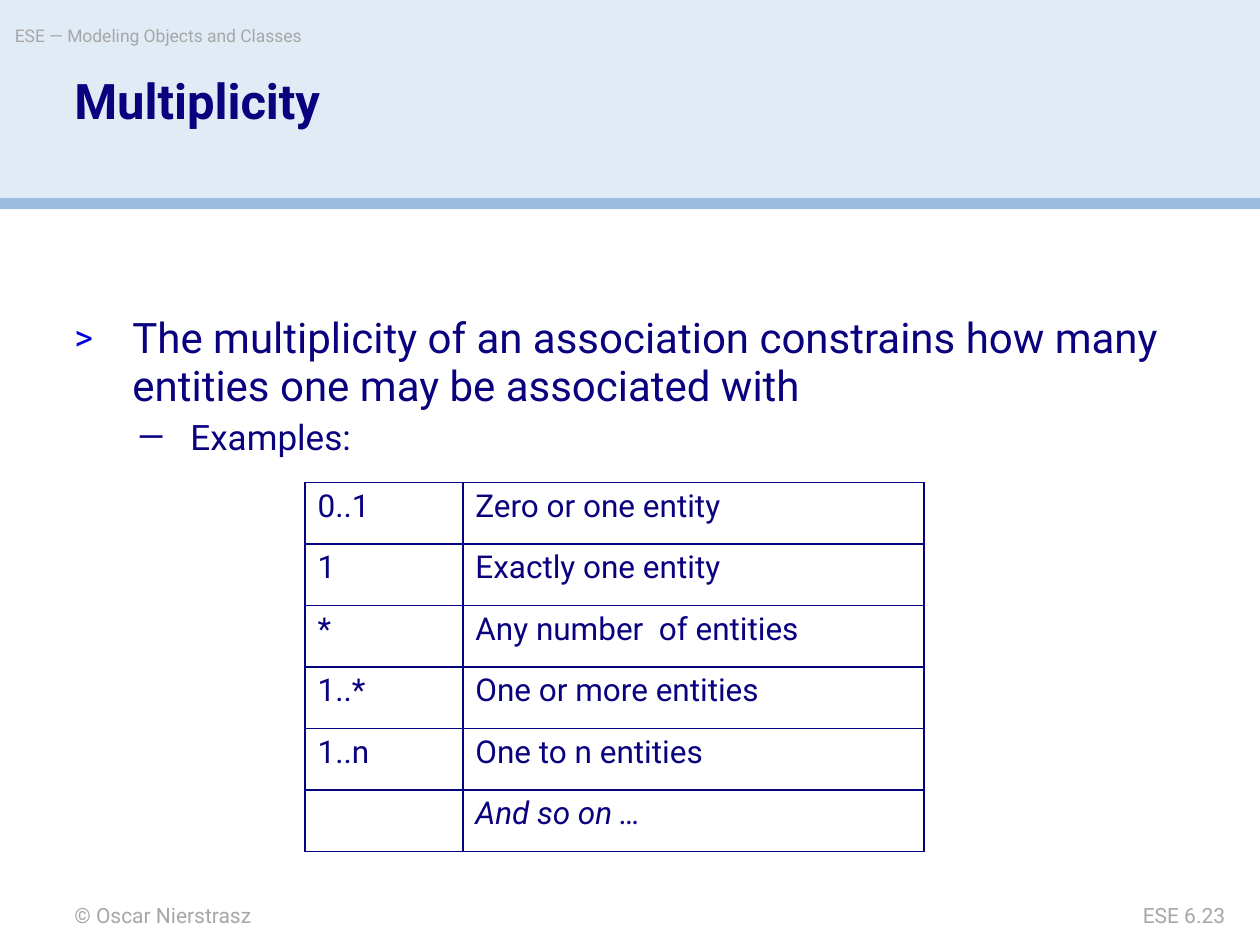
from lxml import etree
from pptx import Presentation
from pptx.dml.color import RGBColor
from pptx.enum.shapes import MSO_SHAPE
from pptx.enum.text import MSO_ANCHOR, PP_ALIGN
from pptx.oxml.ns import qn
from pptx.util import Cm, Pt

RECTANGLE = MSO_SHAPE.RECTANGLE
TOP, MIDDLE = MSO_ANCHOR.TOP, MSO_ANCHOR.MIDDLE
LEFT, RIGHT = PP_ALIGN.LEFT, PP_ALIGN.RIGHT

NAVY, BORDER, BLUE, GREY = "0A017F", "05027D", "0005DF", "A7A7A7"
PALE_BLUE, MID_BLUE = "E1EBF5", "9CBDDE"

MULTIPLICITIES = [
    ("0..1", "Zero or one entity"),
    ("1", "Exactly one entity"),
    ("*", "Any number  of entities"),
    ("1..*", "One or more entities"),
    ("1..n", "One to n entities"),
    ("", "And so on …"),
]


def color(hex_string):
    return RGBColor.from_string(hex_string)


def add_color(parent, hex_string):
    etree.SubElement(parent, qn("a:srgbClr"), val=hex_string)


class SlideBuilder:
    font_name = "Roboto"

    def __init__(self, slide):
        self.slide = slide

    def band(self, top, height, fill):
        """Draw a filled strip across the whole slide."""
        shape = self.slide.shapes.add_shape(
            RECTANGLE, 0, Cm(top), Cm(25.4), Cm(height))
        shape.shadow.inherit = False
        shape.fill.solid()
        shape.fill.fore_color.rgb = color(fill)
        shape.line.fill.background()

    def add_text(self, paragraph, text, size, text_color=NAVY, spacing=1.0,
                 align=LEFT, **font_values):
        paragraph.alignment = align
        paragraph.line_spacing = spacing
        run = paragraph.add_run()
        run.text = text
        values = {"name": self.font_name, "size": Pt(size), **font_values}
        for name, value in values.items():
            setattr(run.font, name, value)
        run.font.color.rgb = color(text_color)

    def text_frame(self, left, top, width, height, anchor=TOP, wrap=True):
        box = self.slide.shapes.add_textbox(
            Cm(left), Cm(top), Cm(width), Cm(height))
        frame = box.text_frame
        values = {"margin_left": 0, "margin_top": 0, "margin_right": 0,
                  "margin_bottom": 0, "word_wrap": wrap,
                  "vertical_anchor": anchor}
        for name, value in values.items():
            setattr(frame, name, value)
        return frame

    def label(self, text, position, size, wrap=True, **style):
        frame = self.text_frame(*position, wrap=wrap)
        self.add_text(frame.paragraphs[0], text, size, **style)

    def bullet(self, paragraph, character, indent, hanging, bullet_color, percent):
        properties = paragraph._p.get_or_add_pPr()
        properties.set("marL", str(Cm(indent)))
        properties.set("indent", str(-Cm(hanging)))
        add_color(etree.SubElement(properties, qn("a:buClr")), bullet_color)
        etree.SubElement(properties, qn("a:buSzPct"), val=str(percent * 1000))
        etree.SubElement(properties, qn("a:buFont"), typeface=self.font_name)
        etree.SubElement(properties, qn("a:buChar"), char=character)

    def body(self, position, items):
        frame = self.text_frame(*position, anchor=MIDDLE)
        for level, (text, size, bullet_values) in enumerate(items):
            paragraph = frame.add_paragraph() if level else frame.paragraphs[0]
            paragraph.level = level
            self.add_text(paragraph, text, size, spacing=0.95)
            paragraph.space_before = Pt(0.2 * size)
            self.bullet(paragraph, *bullet_values)

    def cell_borders(self, cell):
        properties = cell._tc.get_or_add_tcPr()
        for side in ("lnL", "lnR", "lnT", "lnB"):
            line = etree.SubElement(properties, qn(f"a:{side}"), w=str(Pt(1)))
            add_color(etree.SubElement(line, qn("a:solidFill")), BORDER)

    def table(self, left, top, column_widths, row_height, rows):
        table = self.slide.shapes.add_table(
            len(rows), len(column_widths), Cm(left), Cm(top),
            Cm(sum(column_widths)), Cm(row_height * len(rows))).table
        table.first_row = table.horz_banding = False
        for column, width in zip(table.columns, column_widths):
            column.width = Cm(width)
        for row, texts in zip(table.rows, rows):
            row.height = Cm(row_height)
            for cell, text in zip(row.cells, texts):
                self.cell_borders(cell)
                cell.fill.background()
                if text:
                    self.add_text(cell.text_frame.paragraphs[0], text, 18,
                                  spacing=0.95, italic=text.startswith("And"))


def main():
    presentation = Presentation()
    presentation.slide_width, presentation.slide_height = Cm(25.4), Cm(19.05)
    builder = SlideBuilder(
        presentation.slides.add_slide(presentation.slide_layouts[6]))

    builder.band(0, 4.01, PALE_BLUE)
    builder.band(3.99, 0.23, MID_BLUE)
    builder.label("© Oscar Nierstrasz", (1.5, 18.19, 10.59, 0.51), 12,
                  text_color=GREY)
    builder.label("ESE — Modeling Objects and Classes",
                  (0.3, 0.51, 14.99, 0.71), 10, wrap=False, text_color=GREY)
    builder.label("ESE 6.23", (20.95, 18.2, 3.75, 0.51), 12,
                  text_color=GREY, align=RIGHT)
    builder.label("Multiplicity", (1.5, 1.55, 22.43, 2.26), 28,
                  spacing=0.9, bold=True)
    builder.body((1.5, 4.6, 22.4, 6.4), [
        ("The multiplicity of an association constrains how many entities "
         "one may be associated with", 24, (">", 1.17, 1.17, BLUE, 85)),
        ("Examples:", 20, ("—", 2.34, 1.07, NAVY, 100)),
    ])
    builder.table(6.15, 9.73, (3.18, 9.3), 1.24, MULTIPLICITIES)

    presentation.save("out.pptx")


if __name__ == "__main__":
    main()
